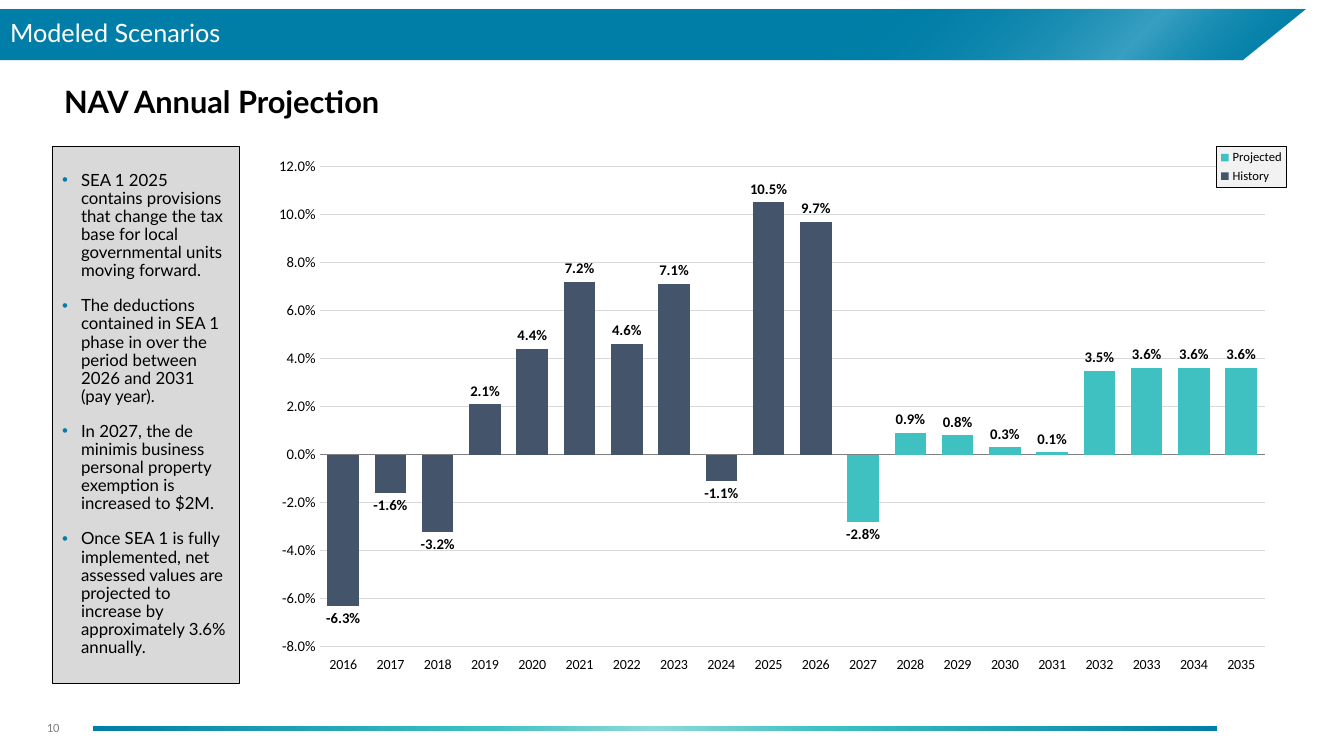
from pptx import Presentation
from pptx.chart.data import CategoryChartData
from pptx.dml.color import RGBColor
from pptx.enum.chart import (
    XL_CHART_TYPE as ChartType, XL_LABEL_POSITION as LabelPosition,
    XL_LEGEND_POSITION as LegendPosition, XL_MARKER_STYLE as MarkerStyle,
    XL_TICK_LABEL_POSITION as TickLabels, XL_TICK_MARK as TickMark)
from pptx.enum.shapes import MSO_SHAPE as Preset
from pptx.enum.text import MSO_ANCHOR as Anchor, MSO_AUTO_SIZE as AutoSize, PP_ALIGN as Align
from pptx.oxml import parse_xml
from pptx.oxml.ns import nsdecls, qn
from pptx.util import Emu, Pt

HEADER = "Modeled Scenarios"
TITLE = "NAV Annual Projection"
PAGE_NUMBER = "10"
NOTES_LIST = [
    "SEA 1 2025 contains provisions that change the tax base for local governmental units moving forward.",
    "The deductions contained in SEA 1 phase in over the period between 2026 and 2031 (pay year).",
    "In 2027, the de minimis business personal property exemption is increased to $2M.",
    "Once SEA 1 is fully implemented, net assessed values are projected to increase by "
    "approximately 3.6% annually.",
]
FIRST_YEAR = 2016
HISTORY = [-0.063, -0.016, -0.032, 0.021, 0.044, 0.072, 0.046, 0.071, -0.011, 0.105, 0.097]
PROJECTED = [-0.028, 0.009, 0.008, 0.003, 0.001, 0.035, 0.036, 0.036, 0.036]
BAR_COLORS = ["44546A", "3FC0C1"]
LABELS = [  # position and number format of each label-only line
    (LabelPosition.BELOW, '"";\\-0.0%;""'),
    (LabelPosition.ABOVE, '0.0%;"";0.0%'),
]

BANNER = [(0, 9), (1306, 9), (1243, 60), (0, 60)]
BANNER_COLOR = "007EA7"
BANNER_GLOW = [(64, "007EA7", 0), (86, "BAEEFF", 30), (100, "007EA7", 0)]
RULE_STOPS = [(0, "007EA7", 100), (35, "3FC0C1", 100), (50, "8CD9DA", 100),
              (65, "3FC0C1", 100), (100, "007EA7", 100)]

# left, top, width, height in px
HEADER_BOX = (0, 9, 1344, 51)
TITLE_BOX = (54, 79, 1235, 50)
LIST_BOX = (52, 146, 187, 537)
CHART_BOX = (259, 146, 1028, 537)
PLOT_BOX = (320, 166, 946, 481)
LEGEND_BOX = (1217, 146, 70, 41)
RULE_BOX = (93, 726, 1124, 5)
NUMBER_BOX = (37, 708, 227, 40)
EMU_PER_PX = 914400 / 100.8


def px(length):
    return Emu(round(length * EMU_PER_PX))


def rgb(color):
    return RGBColor.from_string(color)


def set_font(font, name, size, color="000000", bold=False):
    font.name, font.size, font.bold = name, Pt(size), bold
    font.color.rgb = rgb(color)


def place(shape, box):
    shape.left, shape.top, shape.width, shape.height = map(px, box)


def set_gradient(shape, stops, angle):
    """Fill with (percent, color, opacity percent) stops along a clockwise angle."""
    stop_xml = "".join(
        f'<a:gs pos="{position * 1000}"><a:srgbClr val="{color}">'
        f'<a:alpha val="{opacity * 1000}"/></a:srgbClr></a:gs>'
        for position, color, opacity in stops)
    gradient = parse_xml(
        f'<a:gradFill {nsdecls("a")} rotWithShape="1"><a:gsLst>{stop_xml}</a:gsLst>'
        f'<a:lin ang="{angle * 60000}" scaled="0"/></a:gradFill>')
    shape.fill.background()
    no_fill = shape._element.spPr.find(qn("a:noFill"))
    no_fill.getparent().replace(no_fill, gradient)


def add_banner(slide):
    builder = slide.shapes.build_freeform(*BANNER[0], scale=EMU_PER_PX)
    builder.add_line_segments(BANNER[1:], close=True)
    return builder.convert_to_shape()


def add_decoration(slide):
    """Put the banner and the bottom rule behind the placeholders."""
    base, glow = add_banner(slide), add_banner(slide)
    rule = slide.shapes.add_shape(Preset.RECTANGLE, *map(px, RULE_BOX))
    base.fill.solid()
    base.fill.fore_color.rgb = rgb(BANNER_COLOR)
    set_gradient(glow, BANNER_GLOW, 45)
    set_gradient(rule, RULE_STOPS, 0)
    for order, shape in enumerate([base, glow, rule]):
        shape.line.fill.background()
        shape.shadow.inherit = False
        shape._element.getparent().insert(2 + order, shape._element)


def write(shape, box, texts, font, spacing=0.9, bullet=False):
    """Place a text shape and fill it; font holds the arguments of set_font."""
    place(shape, box)
    frame = shape.text_frame
    frame.word_wrap, frame.auto_size = True, AutoSize.NONE
    frame.vertical_anchor = Anchor.MIDDLE
    for index, text in enumerate(texts):
        paragraph = frame.add_paragraph() if index else frame.paragraphs[0]
        paragraph.text = text
        paragraph.alignment = Align.LEFT
        paragraph.line_spacing = spacing
        paragraph.space_before = Pt(12 if index else 0)
        properties = paragraph._p.get_or_add_pPr()
        indent = px(19) if bullet else 0
        properties.set("marL", str(indent))
        properties.set("indent", str(-indent))
        marks = ([f'<a:buClr {nsdecls("a")}><a:srgbClr val="{BANNER_COLOR}"/></a:buClr>',
                  f'<a:buFont {nsdecls("a")} typeface="Arial"/>',
                  f'<a:buChar {nsdecls("a")} char="•"/>']
                 if bullet else [f'<a:buNone {nsdecls("a")}/>'])
        for mark in marks:
            properties.append(parse_xml(mark))
        set_font(paragraph.font, *font)


def layout_xml(box, inner=False):
    """Give a manual layout for a px box as fractions of the chart."""
    left, top, width, height = CHART_BOX
    fractions = [(box[0] - left) / width, (box[1] - top) / height, box[2] / width, box[3] / height]
    target = '<c:layoutTarget val="inner"/>' if inner else ""
    sizes = "".join(f'<c:{tag} val="{value:.3f}"/>' for tag, value in zip("xywh", fractions))
    return parse_xml(
        f'<c:layout {nsdecls("c")}><c:manualLayout>{target}<c:xMode val="edge"/>'
        f'<c:yMode val="edge"/>{sizes}</c:manualLayout></c:layout>')


def remove_children(element, tag):
    for child in element.findall(qn(tag)):
        element.remove(child)


def move_labels_to_lines(chart):
    """Turn the series after the bars into a line plot on the same axes."""
    bars = chart._chartSpace.find(".//" + qn("c:barChart"))
    lines = parse_xml(f'<c:lineChart {nsdecls("c")}><c:grouping val="standard"/>'
                      '<c:varyColors val="0"/><c:marker val="1"/></c:lineChart>')
    for series in bars.findall(qn("c:ser"))[len(BAR_COLORS):]:
        remove_children(series, "c:invertIfNegative")
        lines.insert(len(lines) - 1, series)
    for axis in bars.findall(qn("c:axId")):
        lines.append(parse_xml(f'<c:axId {nsdecls("c")} val="{axis.get("val")}"/>'))
    bars.addnext(lines)


def style_axes(chart):
    years, values = chart.category_axis, chart.value_axis
    for axis, size in ((years, 10), (values, 10.5)):
        axis.major_tick_mark = axis.minor_tick_mark = TickMark.NONE
        set_font(axis.tick_labels.font, "Calibri", size)
    years.tick_label_position = TickLabels.LOW
    years.format.line.color.rgb = rgb("808080")
    years.format.line.width = Pt(0.75)
    values.minimum_scale, values.maximum_scale, values.major_unit = -0.08, 0.12, 0.02
    values.tick_labels.number_format = "0.0%"
    values.tick_labels.number_format_is_linked = False
    values.format.line.fill.background()
    values.major_gridlines.format.line.color.rgb = rgb("D9D9D9")
    values.major_gridlines.format.line.width = Pt(0.75)


def style_legend(chart):
    chart.has_legend = True
    legend = chart.legend
    legend.position = LegendPosition.CORNER
    legend.include_in_layout = True
    set_font(legend.font, "Calibri", 9)
    element = legend._element
    remove_children(element, "c:layout")
    hidden = range(len(BAR_COLORS), len(BAR_COLORS) + len(LABELS))
    entries = [parse_xml(f'<c:legendEntry {nsdecls("c")}><c:idx val="{index}"/>'
                         '<c:delete val="1"/></c:legendEntry>') for index in hidden]
    for order, part in enumerate([*entries, layout_xml(LEGEND_BOX)], start=1):
        element.insert(order, part)
    element.find(qn("c:overlay")).addnext(parse_xml(
        f'<c:spPr {nsdecls("c", "a")}><a:solidFill><a:srgbClr val="F2F2F2"/></a:solidFill>'
        '<a:ln w="9525"><a:solidFill><a:srgbClr val="000000"/></a:solidFill></a:ln></c:spPr>'))


def add_projection_chart(slide):
    growth = HISTORY + PROJECTED
    data = CategoryChartData(number_format="0.0%")
    data.categories = [str(FIRST_YEAR + index) for index in range(len(growth))]
    data.add_series("History", HISTORY + [None] * len(PROJECTED))
    data.add_series("Projected", [None] * len(HISTORY) + PROJECTED)
    for number in range(3, 3 + len(LABELS)):
        data.add_series(f"Series {number}", growth)
    chart = slide.shapes.add_chart(ChartType.COLUMN_STACKED, *map(px, CHART_BOX), data).chart
    chart.has_title = False
    set_font(chart.font, "Calibri", 10)
    move_labels_to_lines(chart)
    bars, lines = chart.plots
    bars.gap_width, bars.overlap, bars.vary_by_categories = 50, 100, False
    for series, color in zip(bars.series, BAR_COLORS):
        series.invert_if_negative = False
        series.format.fill.solid()
        series.format.fill.fore_color.rgb = rgb(color)
    for series, (position, number_format) in zip(lines.series, LABELS):
        series.smooth = False
        series.format.line.fill.background()
        series.marker.style = MarkerStyle.NONE
        labels = series.data_labels
        labels.show_value = True
        labels.position = position
        labels.number_format, labels.number_format_is_linked = number_format, False
        set_font(labels.font, "Calibri", 10.5, bold=True)
    style_axes(chart)
    style_legend(chart)
    plot_area = chart._chartSpace.find(".//" + qn("c:plotArea"))
    remove_children(plot_area, "c:layout")
    plot_area.insert(0, layout_xml(PLOT_BOX, inner=True))


def main():
    presentation = Presentation()
    presentation.slide_width, presentation.slide_height = px(1344), px(756)
    slide = presentation.slides.add_slide(presentation.slide_layouts[3])
    title, header, notes = slide.placeholders
    add_decoration(slide)
    write(title, TITLE_BOX, [TITLE], ("Lato", 22, "000000", True))
    write(header, HEADER_BOX, [HEADER], ("Lato", 18, "FFFFFF"))
    write(notes, LIST_BOX, NOTES_LIST, ("Lato", 12), bullet=True)
    notes.fill.solid()
    notes.fill.fore_color.rgb = rgb("D9D9D9")
    notes.line.color.rgb = rgb("000000")
    notes.line.width = Pt(0.5)
    number = slide.shapes.add_textbox(0, 0, 0, 0)
    write(number, NUMBER_BOX, [PAGE_NUMBER], ("Calibri", 9, "808080"), spacing=1.0)
    add_projection_chart(slide)
    presentation.save("out.pptx")


if __name__ == "__main__":
    main()
